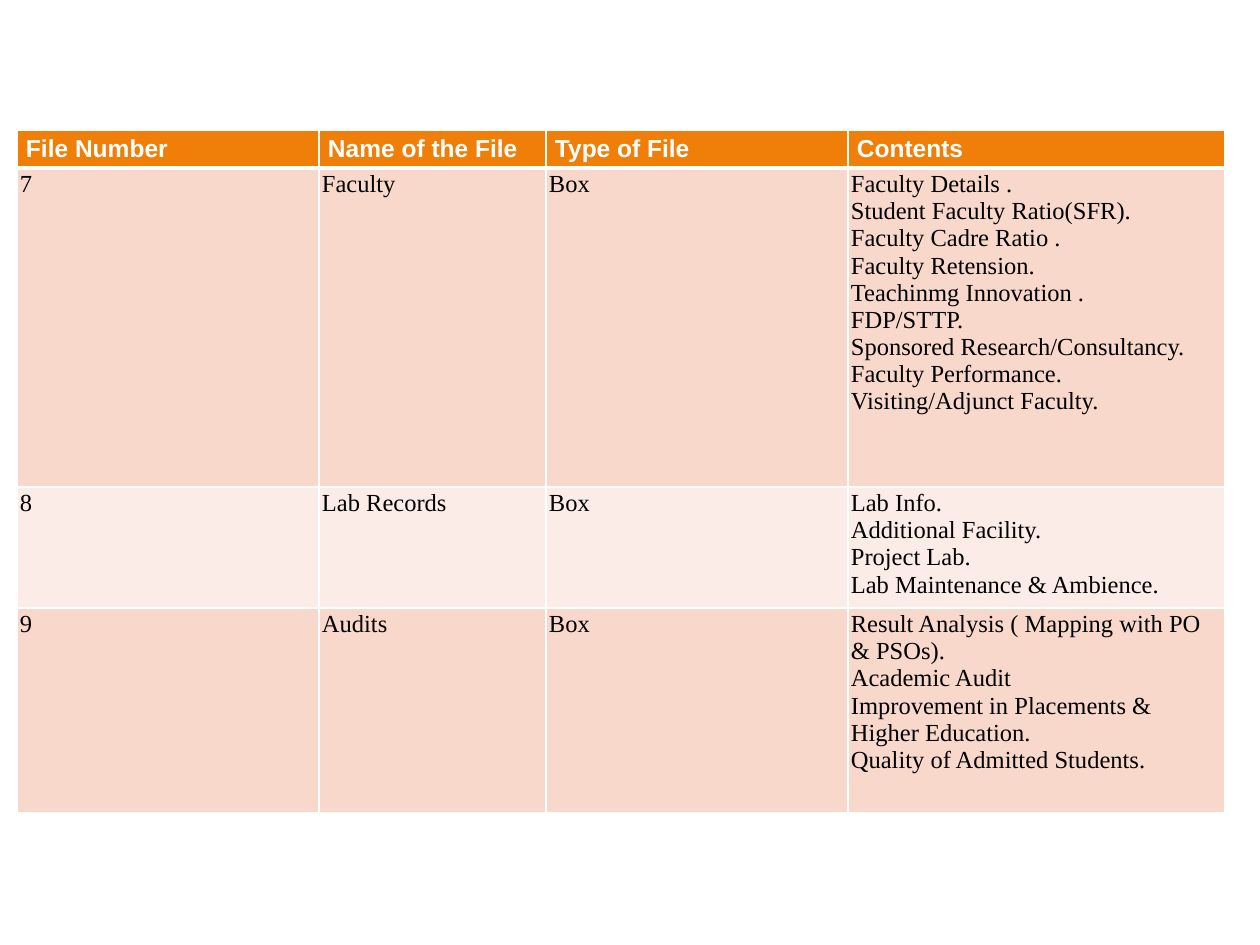
from dataclasses import dataclass
from itertools import product

from lxml.etree import SubElement
from pptx import Presentation
from pptx.dml.color import RGBColor
from pptx.oxml.ns import qn
from pptx.util import Pt

EMU_PER_PX = 914400 / 126


def px(length):
    return round(length * EMU_PER_PX)


@dataclass(frozen=True)
class Theme:
    background: str = "FFFFFF"
    rule: str = "FFFFFF"
    header_fill: str = "F07F09"
    band_fills: tuple = ("F9D8CC", "FCECE7")
    header_text: str = "FFFFFF"
    body_text: str = "000000"
    header_font: str = "Arial"
    body_font: str = "Times New Roman"
    text_size: int = 14
    thin_rule: int = 1
    thick_rule: int = 3


class PageBuilder:
    def __init__(self, page, theme):
        self.page = page
        self.theme = theme
        fill = page.background.fill
        fill.solid()
        fill.fore_color.rgb = RGBColor.from_string(theme.background)

    def table(self, left, top, widths, heights, rows):
        frame = self.page.shapes.add_table(
            len(rows), len(widths), px(left), px(top), px(sum(widths)), px(sum(heights))
        )
        table = frame.table
        table.horz_banding = False
        for column, width in zip(table.columns, widths):
            column.width = px(width)
        for row, height in zip(table.rows, heights):
            row.height = px(height)
        for row, column in product(range(len(rows)), range(len(widths))):
            self.cell(table.cell(row, column), row, rows[row][column])

    def cell(self, cell, row, text):
        theme = self.theme
        header = row == 0
        side, edge = (9, 5) if header else (3, 3)
        margins = {
            "margin_left": px(side),
            "margin_right": px(side),
            "margin_top": px(edge),
            "margin_bottom": px(edge),
        }
        for name, value in margins.items():
            setattr(cell, name, value)
        self.borders(cell, row)
        color = theme.header_fill if header else theme.band_fills[(row - 1) % 2]
        cell.fill.solid()
        cell.fill.fore_color.rgb = RGBColor.from_string(color)
        cell.text = text
        text_format = {
            "name": theme.header_font if header else theme.body_font,
            "size": Pt(theme.text_size),
            "bold": header,
        }
        text_color = theme.header_text if header else theme.body_text
        for para in cell.text_frame.paragraphs:
            for span in para.runs:
                for name, value in text_format.items():
                    setattr(span.font, name, value)
                span.font.color.rgb = RGBColor.from_string(text_color)

    def borders(self, cell, row):
        theme = self.theme
        properties = cell._tc.get_or_add_tcPr()
        thick_side = {0: "B", 1: "T"}.get(row)
        for side in "LRTB":
            width = theme.thick_rule if side == thick_side else theme.thin_rule
            line = SubElement(properties, qn(f"a:ln{side}"), w=str(Pt(width)))
            fill = SubElement(line, qn("a:solidFill"))
            SubElement(fill, qn("a:srgbClr"), val=theme.rule)


FILE_ROWS = [
    ("File Number", "Name of the File", "Type of File", "Contents"),
    (
        "7",
        "Faculty",
        "Box",
        "Faculty Details .\n"
        "Student Faculty Ratio(SFR).\n"
        "Faculty Cadre Ratio .\n"
        "Faculty Retension.\n"
        "Teachinmg Innovation .\n"
        "FDP/STTP.\n"
        "Sponsored Research/Consultancy.\n"
        "Faculty Performance.\n"
        "Visiting/Adjunct Faculty.",
    ),
    (
        "8",
        "Lab Records",
        "Box",
        "Lab Info.\n"
        "Additional Facility.\n"
        "Project Lab.\n"
        "Lab Maintenance & Ambience.",
    ),
    (
        "9",
        "Audits",
        "Box",
        "Result Analysis ( Mapping with PO & PSOs).\n"
        "Academic Audit\n"
        "Improvement in Placements & Higher Education.\n"
        "Quality of Admitted Students.",
    ),
]


def main():
    deck = Presentation()
    deck.slide_width, deck.slide_height = px(1260), px(945)
    page = deck.slides.add_slide(deck.slide_layouts[6])
    builder = PageBuilder(page, Theme())
    builder.table(17, 130, (302, 227, 302, 377), (38, 319, 121, 205), FILE_ROWS)
    deck.save("out.pptx")


if __name__ == "__main__":
    main()
